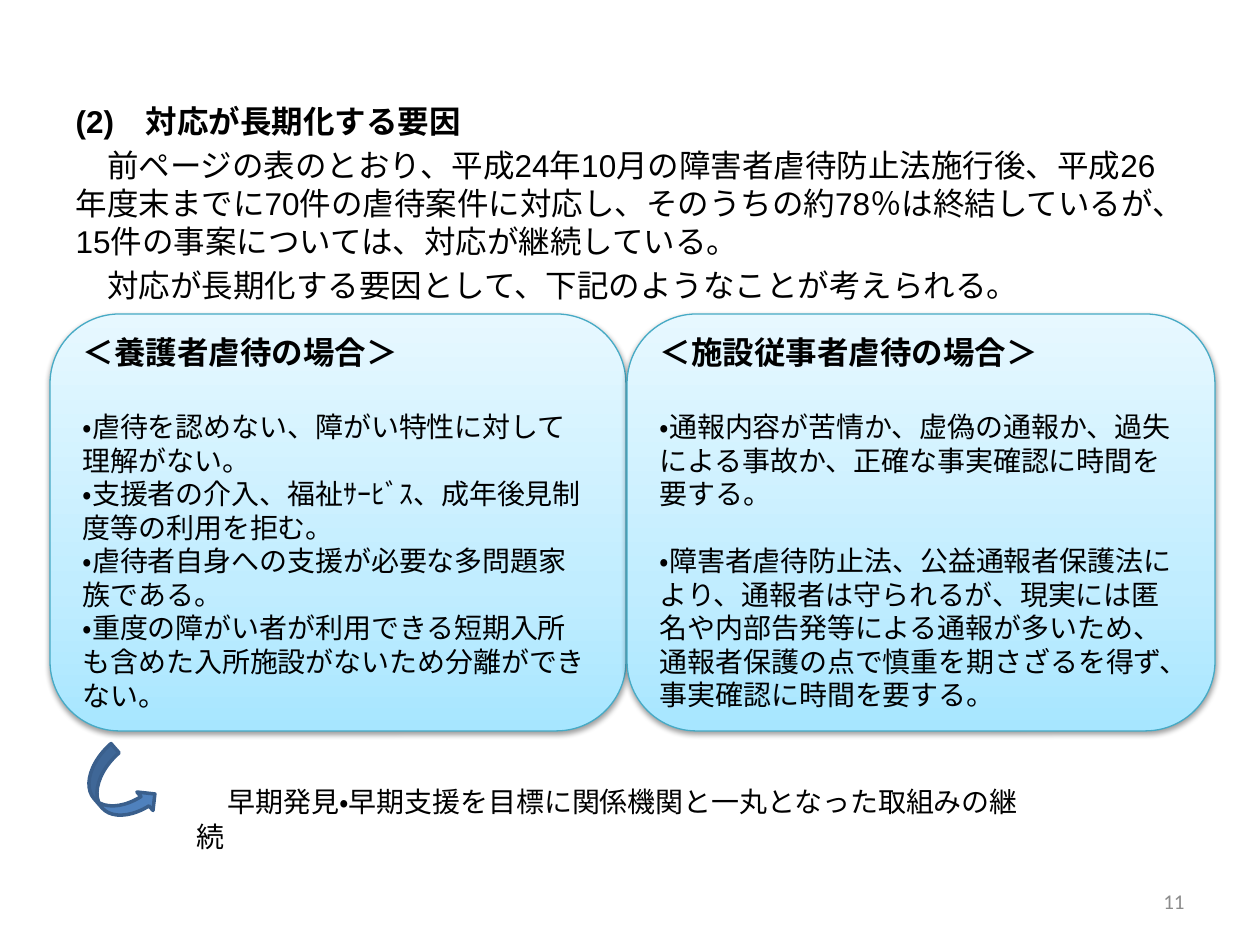
import copy
from dataclasses import dataclass

import lxml.etree
import pptx
import pptx.dml.color
import pptx.enum.lang
import pptx.enum.shapes
import pptx.enum.text
import pptx.oxml.ns
import pptx.util

EMU_PER_PX = 914400 / 126
SHAPE = pptx.enum.shapes.MSO_SHAPE
ALIGN = pptx.enum.text.PP_ALIGN
ANCHOR = pptx.enum.text.MSO_ANCHOR
qn = pptx.oxml.ns.qn


@dataclass(frozen=True)
class Theme:
    text: str = "000000"
    muted: str = "8C8C8C"
    paper: str = "FFFFFF"
    card_line: str = "46AAC5"
    card_stops: tuple = ((0, "A7E6FF"), (0.35, "C1EDFF"), (1, "E7F8FF"))
    arrow: str = "4F81BD"
    arrow_line: str = "3A5F8C"
    sans: str = "Arial"
    body: str = "Calibri"
    large: int = 18
    medium: int = 16
    small: int = 12


T = Theme()


@dataclass(frozen=True)
class Box:
    x: int
    y: int
    w: int
    h: int

    def emu(self) -> tuple:
        return tuple(round(v * EMU_PER_PX) for v in (self.x, self.y, self.w, self.h))


@dataclass(frozen=True)
class Run:
    text: str
    font: str = T.body
    size: int = T.medium
    bold: bool = False
    color: str = T.text


@dataclass(frozen=True)
class Para:
    runs: tuple
    before: float | None = None
    align: ALIGN = ALIGN.LEFT


@dataclass(frozen=True)
class Card:
    box: Box
    paras: tuple


def rgb(value: str) -> pptx.dml.color.RGBColor:
    return pptx.dml.color.RGBColor.from_string(value)


def write(tf, paras: tuple, anchor: ANCHOR = ANCHOR.MIDDLE) -> None:
    tf.word_wrap = True
    tf.auto_size = pptx.enum.text.MSO_AUTO_SIZE.NONE
    tf.vertical_anchor = anchor
    tf.text = "\n".join("".join(run.text for run in para.runs[:1]) for para in paras)
    for p, para in zip(tf.paragraphs, paras):
        p.alignment = para.align
        if para.before is not None:
            p.space_before = pptx.util.Pt(para.before)
        for run in para.runs[1:]:
            p.add_run().text = run.text
        for r, run in zip(p.runs, para.runs):
            r.font.name = run.font
            r.font.size = pptx.util.Pt(run.size)
            r.font.bold = run.bold
            r.font.color.rgb = rgb(run.color)
            r.font.language_id = pptx.enum.lang.MSO_LANGUAGE_ID.JAPANESE


def add_shape(s, kind: SHAPE, box: Box):
    sp = s.shapes.add_shape(kind, *box.emu())
    sp.shadow.inherit = False
    return sp


def add_card(s, card: Card) -> None:
    sp = add_shape(s, SHAPE.ROUNDED_RECTANGLE, card.box)
    sp.line.color.rgb = rgb(T.card_line)
    sp.line.width = pptx.util.Pt(0.75)

    # Three-stop gradient running from bottom to top
    sp.fill.gradient()
    stops = sp._element.spPr.find(".//" + qn("a:gsLst"))
    stops.append(copy.deepcopy(stops[0]))
    for stop, (position, color) in zip(sp.fill.gradient_stops, T.card_stops):
        stop.position = position
        stop.color.rgb = rgb(color)
    sp.fill.gradient_angle = 90

    # Soft shadow below
    effects = sp._element.spPr.find(qn("a:effectLst"))
    shadow = lxml.etree.SubElement(effects, qn("a:outerShdw"), blurRad="40000",
                                   dist="20000", dir="5400000", rotWithShape="0")
    color = lxml.etree.SubElement(shadow, qn("a:srgbClr"), val="000000")
    lxml.etree.SubElement(color, qn("a:alpha"), val="38000")
    write(sp.text_frame, card.paras)


def add_body(s, box: Box, paras: tuple) -> None:
    body = s.placeholders[1]
    body.left, body.top, body.width, body.height = box.emu()
    write(body.text_frame, paras, ANCHOR.TOP)
    for p in body.text_frame.paragraphs:
        pPr = p._p.get_or_add_pPr()
        pPr.set("marL", "0")
        pPr.set("indent", "0")
        lxml.etree.SubElement(pPr, qn("a:buNone"))


INTRO = (
    Para((Run("(2)　対応が長期化する要因", T.sans, T.large, True),)),
    Para((Run("　前ページの表のとおり、平成24年10月の障害者虐待防止法施行後、平成26年度末までに70件の"
              "虐待案件に対応し、そのうちの約78％は終結しているが、15件の事案については、対応が継続している。",
              T.sans, T.large),)),
    Para((Run("　対応が長期化する要因として、下記のようなことが考えられる。", T.sans, T.large),)),
)

CARDS = (
    Card(Box(50, 314, 576, 417), (
        Para((Run("＜養護者虐待の場合＞", T.sans, T.large, True),)),
        Para((Run("・虐待を認めない、障がい特性に対して理解がない。", T.sans),), 22),
        Para((Run("・支援者の介入、", T.sans), Run("福祉ｻｰﾋﾞｽ、成年後見制度等の利用を拒む。"))),
        Para((Run("・虐待者自身への支援が必要な多問題家族である。"),)),
        Para((Run("・重度の障がい者が利用できる短期入所も含めた入所施設がないため分離ができない。"),)),
    )),
    Card(Box(627, 314, 588, 417), (
        Para((Run("＜施設従事者虐待の場合＞", size=T.large, bold=True),)),
        Para((Run("・通報内容が苦情か、虚偽の通報か、過失による事故か、正確な事実確認に時間を要する。"),), 22),
        Para((Run("・障害者虐待防止法、公益通報者保護法により、通報者は守られるが、現実には匿名や内部告発等による"
                  "通報が多いため、通報者保護の点で慎重を期さざるを得ず、事実確認に時間を要する。"),), 19),
    )),
)

CONCLUSION = (Para((Run("　", size=T.large),
                    Run("早期発見・早期支援を目標に関係機関と一丸となった取組みの継続"))),)
PAGE_NUMBER = (Para((Run("11", size=T.small, color=T.muted),), align=ALIGN.RIGHT),)


def main() -> None:
    prs = pptx.Presentation()
    prs.slide_width = pptx.util.Inches(10)
    prs.slide_height = pptx.util.Inches(7.5)
    s = prs.slides.add_slide(prs.slide_layouts[1])
    title = s.shapes.title._element
    title.getparent().remove(title)

    # Introduction and page number
    add_body(s, Box(63, 96, 1134, 774), INTRO)
    number = s.shapes.add_textbox(*Box(903, 876, 294, 50).emu())
    write(number.text_frame, PAGE_NUMBER)

    # Factors by type of case
    for card in CARDS:
        add_card(s, card)

    # Conclusion with its arrow
    conclusion = add_shape(s, SHAPE.RECTANGLE, Box(184, 775, 853, 84))
    conclusion.fill.solid()
    conclusion.fill.fore_color.rgb = rgb(T.paper)
    conclusion.line.fill.background()
    write(conclusion.text_frame, CONCLUSION)

    arrow = add_shape(s, SHAPE.CURVED_RIGHT_ARROW, Box(94, 750, 49, 79))
    arrow.rotation = 319
    arrow.fill.solid()
    arrow.fill.fore_color.rgb = rgb(T.arrow)
    arrow.line.color.rgb = rgb(T.arrow_line)
    arrow.line.width = pptx.util.Pt(2)

    prs.save("out.pptx")


if __name__ == "__main__":
    main()
